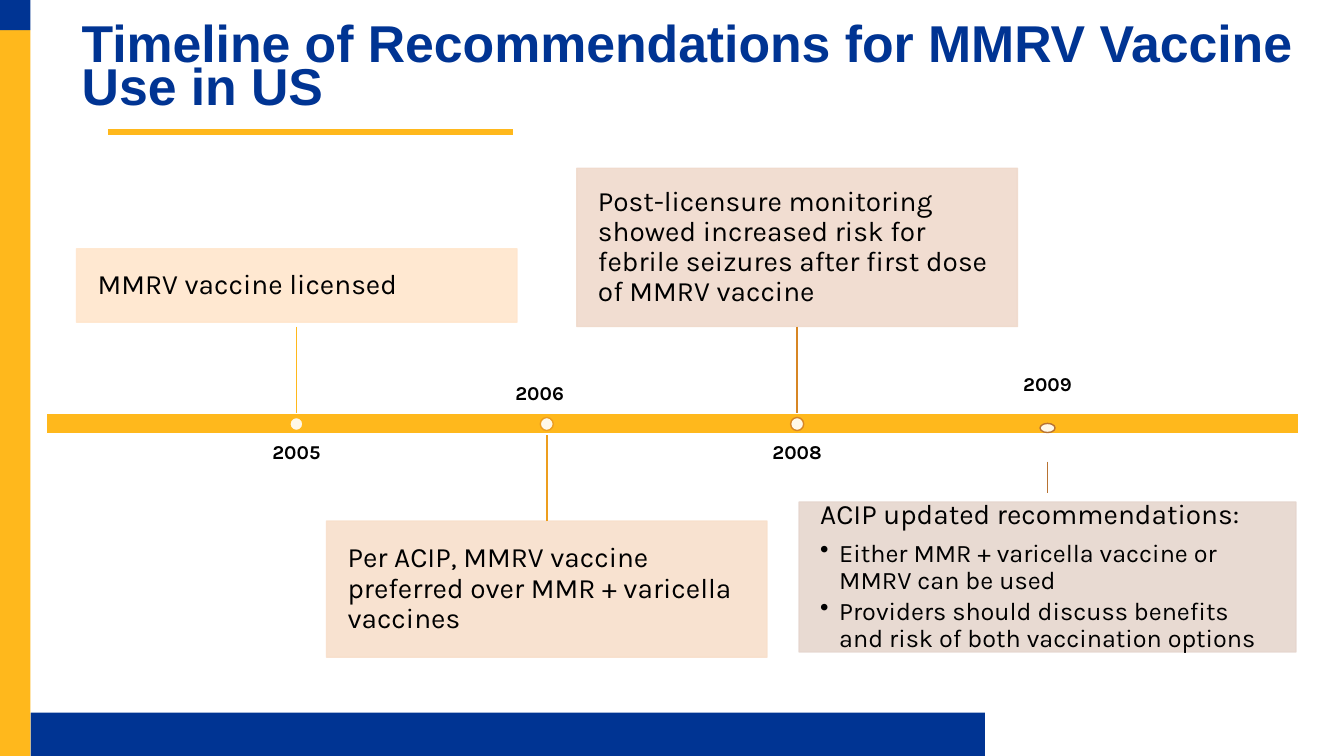
from lxml import etree
from pptx import Presentation
from pptx.dml.color import RGBColor
from pptx.enum.shapes import MSO_CONNECTOR as Connector, MSO_SHAPE as Shape
from pptx.enum.text import MSO_ANCHOR as Anchor, PP_ALIGN as Align
from pptx.oxml.ns import qn
from pptx.util import Cm, Pt

COLORS = {
    "blue": "003493", "gold": "FFB81C", "white": "FFFFFF", "black": "000000",
    "card2005": "FFE6CD", "card2006": "F8DFCB", "card2008": "F0DACC", "card2009": "E6D6CE",
    "stem2005": "FFB81C", "stem2006": "ED9E1E", "stem2008": "D78624", "stem2009": "B87333",
}
BAR_TOP, BAR_HEIGHT = 10.41, 0.51
FIRST_X, PITCH = 7.47, 6.31
YEAR_WIDTH = 10.08

# year, card box, stem top and bottom, card side joined to the stem,
# year label (shift, top, height, anchor), dot (top, width, height), card text
MILESTONES = [
    ("2005", (1.93, 6.27, 11.1, 1.85), (8.23, BAR_TOP), None,
     (0, 11.15, 1.45, Anchor.TOP), (10.52, 0.33, 0.33),
     ["MMRV vaccine licensed"]),
    ("2006", (8.23, 13.13, 11.1, 3.43), (13.13, 10.95), 0,
     (-0.18, 8.76, 1.45, Anchor.BOTTOM), (10.52, 0.33, 0.33),
     ["Per ACIP, MMRV vaccine preferred over MMR + varicella vaccines"]),
    ("2008", (14.54, 4.24, 11.1, 3.99), (8.23, BAR_TOP), 2,
     (0, 11.15, 1.45, Anchor.TOP), (10.52, 0.33, 0.33),
     ["Post-licensure monitoring showed increased risk for febrile seizures "
      "after first dose of MMRV vaccine"]),
    ("2009", (20.14, 12.65, 12.52, 3.78), (11.63, 12.42), None,
     (0, 9.45, 0.53, Anchor.BOTTOM), (10.67, 0.38, 0.23),
     ["ACIP updated recommendations:",
      "Either MMR + varicella vaccine or MMRV can be used",
      "Providers should discuss benefits and risk of both vaccination options"]),
]


def color(name):
    return RGBColor.from_string(COLORS[name])


def set_alpha(fill_parent, percent):
    """Make the solid fill below an element partly transparent."""
    tone = fill_parent.find(qn("a:solidFill"))[0]
    etree.SubElement(tone, qn("a:alpha"), val=str(percent * 1000))


def add_bullet(paragraph):
    properties = paragraph._p.get_or_add_pPr()
    properties.set("marL", str(Cm(0.48)))
    properties.set("indent", str(-Cm(0.48)))
    etree.SubElement(properties, qn("a:buChar"), char="•")


def write(frame, lines, size=20, bullet_size=18, font="Karla", tone="black", bold=False,
          align=Align.LEFT, anchor=Anchor.TOP, insets=(0, 0), spacing=0.9):
    """Fill a text frame; every line after the first is a bullet."""
    frame.word_wrap = True
    frame.vertical_anchor = anchor
    frame.margin_left = frame.margin_right = Cm(insets[0])
    frame.margin_top = frame.margin_bottom = Cm(insets[1])
    for index, line in enumerate(lines):
        paragraph = frame.add_paragraph() if index else frame.paragraphs[0]
        paragraph.alignment = align
        paragraph.line_spacing = spacing
        paragraph.space_after = Pt(2.7 if index else 7)
        if index:
            add_bullet(paragraph)
        run = paragraph.add_run()
        run.text = line
        run.font.name, run.font.bold = font, bold
        run.font.size = Pt(bullet_size if index else size)
        run.font.color.rgb = color(tone)


class TimelineSlide:
    def __init__(self, presentation):
        self.shapes = presentation.slides.add_slide(presentation.slide_layouts[6]).shapes

    def block(self, box, fill, line=None, kind=Shape.RECTANGLE, fill_alpha=100, line_alpha=100):
        shape = self.shapes.add_shape(kind, *map(Cm, box))
        shape.shadow.inherit = False
        shape.fill.solid()
        shape.fill.fore_color.rgb = color(fill)
        if fill_alpha < 100:
            set_alpha(shape._element.spPr, fill_alpha)
        if line:
            shape.line.color.rgb = color(line)
            shape.line.width = Pt(1)
            if line_alpha < 100:
                set_alpha(shape._element.spPr.find(qn("a:ln")), line_alpha)
        else:
            shape.line.fill.background()
        return shape

    def text(self, box, line, **style):
        write(self.shapes.add_textbox(*map(Cm, box)).text_frame, [line], **style)

    def line(self, start, end, tone, width=1):
        connector = self.shapes.add_connector(Connector.STRAIGHT, *map(Cm, start + end))
        connector.line.color.rgb = color(tone)
        connector.line.width = Pt(width)
        etree.SubElement(connector._element.spPr, qn("a:effectLst"))
        return connector

    def card(self, box, tone, lines):
        card = self.block(box, tone, tone, fill_alpha=90, line_alpha=90)
        write(card.text_frame, lines, anchor=Anchor.MIDDLE, insets=(0.53, 0.53))
        return card

    def milestone(self, x, year, card_box, stem_span, joined_side, label, dot, lines):
        stem_tone = "stem" + year
        shift, label_top, label_height, anchor = label
        self.text((x + shift - YEAR_WIDTH / 2, label_top, YEAR_WIDTH, label_height), year,
                  size=14, bold=True, align=Align.CENTER, anchor=anchor)
        card = self.card(card_box, "card" + year, lines)
        stem = self.line((x, stem_span[0]), (x, stem_span[1]), stem_tone)
        if joined_side is not None:
            stem.begin_connect(card, joined_side)
        dot_top, dot_width, dot_height = dot
        self.block((x - dot_width / 2, dot_top, dot_width, dot_height), "white", stem_tone,
                   kind=Shape.OVAL, fill_alpha=90)


def main():
    presentation = Presentation()
    presentation.slide_width, presentation.slide_height = Cm(33.87), Cm(19.05)
    slide = TimelineSlide(presentation)

    slide.block((0.77, 17.96, 24.05, 1.09), "blue")
    slide.line((2.72, 3.33), (12.93, 3.33), "gold", width=4)
    slide.block((0, 0.76, 0.77, 18.29), "gold")
    slide.block((0, 0, 0.77, 0.76), "blue")
    slide.text((2.06, 0.56, 30.58, 2.74),
               "Timeline of Recommendations for MMRV Vaccine Use in US",
               size=37, font="Arial", tone="blue", bold=True, insets=(0, 0.13), spacing=0.7)

    slide.block((1.17, BAR_TOP, 31.55, BAR_HEIGHT), "gold", "white")
    for index, milestone in enumerate(MILESTONES):
        slide.milestone(FIRST_X + index * PITCH, *milestone)

    presentation.save("out.pptx")


if __name__ == "__main__":
    main()
